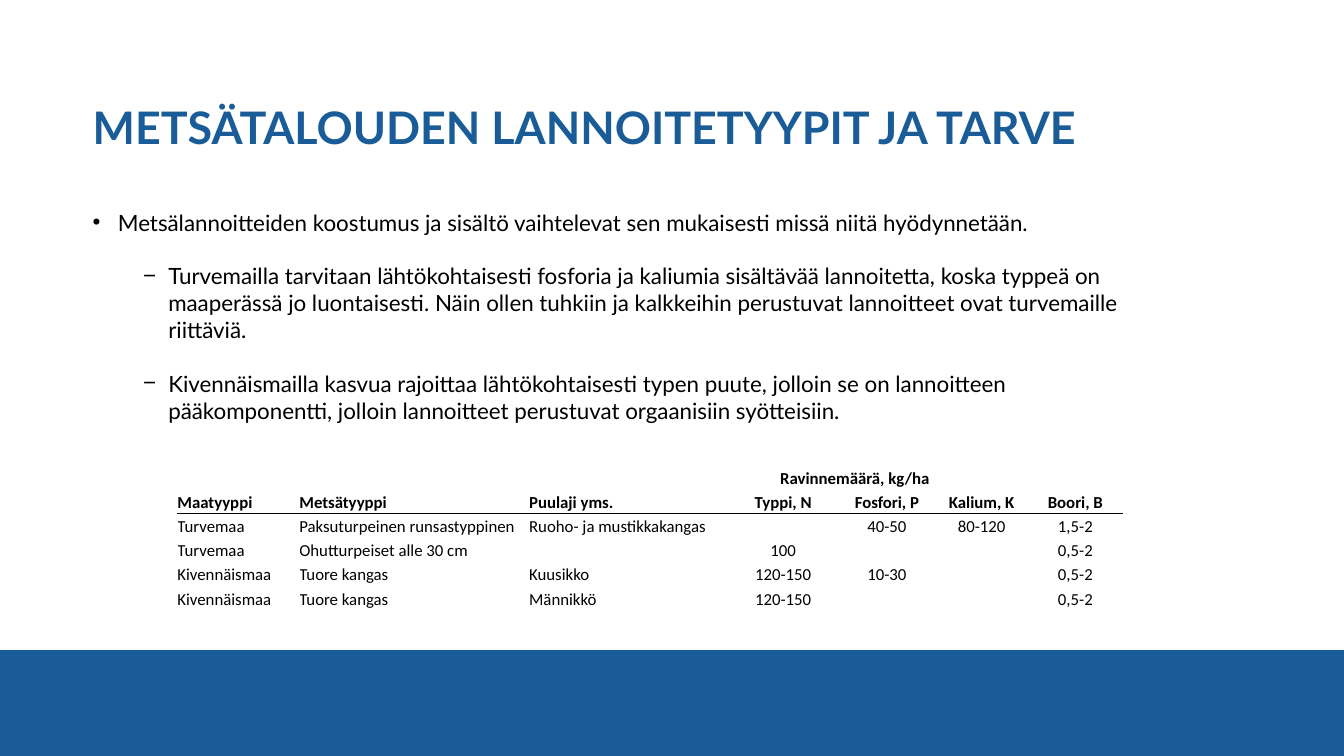
import pptx
import pptx.dml.color
import pptx.enum.shapes
import pptx.enum.text
import pptx.util
from lxml import etree
from pptx.oxml.ns import qn

Pt = pptx.util.Pt
ALIGN = pptx.enum.text.PP_ALIGN
ANCHOR = pptx.enum.text.MSO_ANCHOR

BLUE, BLACK = "195C98", "000000"
WIDE, HIGH = 960, 540
BAND = 75.6
LEFT = 66.24

TITLE = "METSÄTALOUDEN LANNOITETYYPIT JA TARVE"
# level, bullet, wording
POINTS = [
    (0, "•", "Metsälannoitteiden koostumus ja sisältö vaihtelevat sen "
     "mukaisesti missä niitä hyödynnetään."),
    (1, "−", "Turvemailla tarvitaan lähtökohtaisesti fosforia ja kaliumia "
     "sisältävää lannoitetta, koska typpeä on maaperässä jo luontaisesti. "
     "Näin ollen tuhkiin ja kalkkeihin perustuvat lannoitteet ovat "
     "turvemaille riittäviä."),
    (1, "−", "Kivennäismailla kasvua rajoittaa lähtökohtaisesti typen puute, "
     "jolloin se on lannoitteen pääkomponentti, jolloin lannoitteet "
     "perustuvat orgaanisiin syötteisiin."),
]
GROUP = "Ravinnemäärä, kg/ha"
ROWS = [
    [""] * 7,
    ["", "", "", GROUP, "", "", ""],
    ["Maatyyppi", "Metsätyyppi", "Puulaji yms.", "Typpi, N", "Fosfori, P",
     "Kalium, K", "Boori, B"],
    ["Turvemaa", "Paksuturpeinen runsastyppinen", "Ruoho- ja mustikkakangas",
     "", "40-50", "80-120", "1,5-2"],
    ["Turvemaa", "Ohutturpeiset alle 30 cm", "", "100", "", "", "0,5-2"],
    ["Kivennäismaa", "Tuore kangas", "Kuusikko", "120-150", "10-30", "",
     "0,5-2"],
    ["Kivennäismaa", "Tuore kangas", "Männikkö", "120-150", "", "", "0,5-2"],
]
COLS = [87.12, 164.16, 141.84, 79.2, 69.12, 66.24, 67.68]
TALLS = [25.92] + [17.28] * 6
SPANS = [(0, 0), (1, 3)]
HEAD = 2  # row of column names
RULES = {HEAD: "a:lnB", HEAD + 1: "a:lnT"}


def tint(hue):
    return pptx.dml.color.RGBColor.from_string(hue)


def write(para, text, face, size, hue, bold=False):
    run = para.add_run()
    run.text = text
    font = run.font
    font.name, font.size, font.bold = face, Pt(size), bold
    font.color.rgb = tint(hue)


def frame(slide, x, y, w, h):
    """Add a wrapping text box without insets."""
    text = slide.shapes.add_textbox(Pt(x), Pt(y), Pt(w), Pt(h)).text_frame
    text.word_wrap = True
    text.margin_left = text.margin_right = 0
    text.margin_top = text.margin_bottom = 0
    return text


def mark(para, level, sign):
    """Give a paragraph its bullet and hanging indent."""
    para.level = level
    props = para._p.get_or_add_pPr()
    props.set("marL", str(Pt(18 + 36 * level)))
    props.set("indent", str(Pt(-18)))
    etree.SubElement(props, qn("a:buFont"), typeface="Arial")
    etree.SubElement(props, qn("a:buChar"), char=sign)


def rule(cell, side):
    """Draw a thin black line on one side of a cell."""
    line = etree.Element(qn(side), w=str(Pt(0.5)))
    fill = etree.SubElement(line, qn("a:solidFill"))
    etree.SubElement(fill, qn("a:srgbClr"), val=BLACK)
    cell._tc.get_or_add_tcPr().insert(0, line)


def fill_cell(cell, text, row, col):
    cell.margin_left = cell.margin_right = 0
    cell.margin_top = cell.margin_bottom = 0
    cell.vertical_anchor = ANCHOR.BOTTOM
    if row in RULES:
        rule(cell, RULES[row])
    cell.fill.background()
    para = cell.text_frame.paragraphs[0]
    if text == GROUP:
        cell.margin_left = Pt(37.5)
    elif col > 2:
        para.alignment = ALIGN.CENTER
    if text:
        write(para, text, "Calibri", 12, BLACK, row <= HEAD)
    else:
        etree.SubElement(para._p, qn("a:endParaRPr"), sz="1200")


def add_grid(slide):
    grid = slide.shapes.add_table(
        len(ROWS), len(COLS), Pt(126.72), Pt(306), Pt(sum(COLS)),
        Pt(sum(TALLS))).table
    grid.first_row = grid.horz_banding = False
    for col, wide in zip(grid.columns, COLS):
        col.width = Pt(wide)
    for row, tall in zip(grid.rows, TALLS):
        row.height = Pt(tall)
    for r, line in enumerate(ROWS):
        for c, text in enumerate(line):
            fill_cell(grid.cell(r, c), text, r, c)
    for r, c in SPANS:
        grid.cell(r, c).merge(grid.cell(r, c + 1))


def main():
    deck = pptx.Presentation()
    deck.slide_width, deck.slide_height = Pt(WIDE), Pt(HIGH)
    slide = deck.slides.add_slide(deck.slide_layouts[6])

    band = slide.shapes.add_shape(
        pptx.enum.shapes.MSO_SHAPE.RECTANGLE, 0, Pt(HIGH - BAND), Pt(WIDE),
        Pt(BAND))
    band.shadow.inherit = False
    band.fill.solid()
    band.fill.fore_color.rgb = tint(BLUE)
    band.line.fill.background()

    title = frame(slide, LEFT, 28.8, 828, 81.36)
    title.vertical_anchor = ANCHOR.BOTTOM
    title.paragraphs[0].line_spacing = 0.9
    write(title.paragraphs[0], TITLE, "Lato", 32, BLUE, True)

    body = frame(slide, LEFT, 149.04, 737.28, 286.56)
    for i, (level, sign, text) in enumerate(POINTS):
        para = body.add_paragraph() if i else body.paragraphs[0]
        mark(para, level, sign)
        para.space_before = Pt(19.2 if i else 0)
        write(para, text, "Lato", 16, BLACK)

    add_grid(slide)
    deck.save("out.pptx")


if __name__ == "__main__":
    main()
